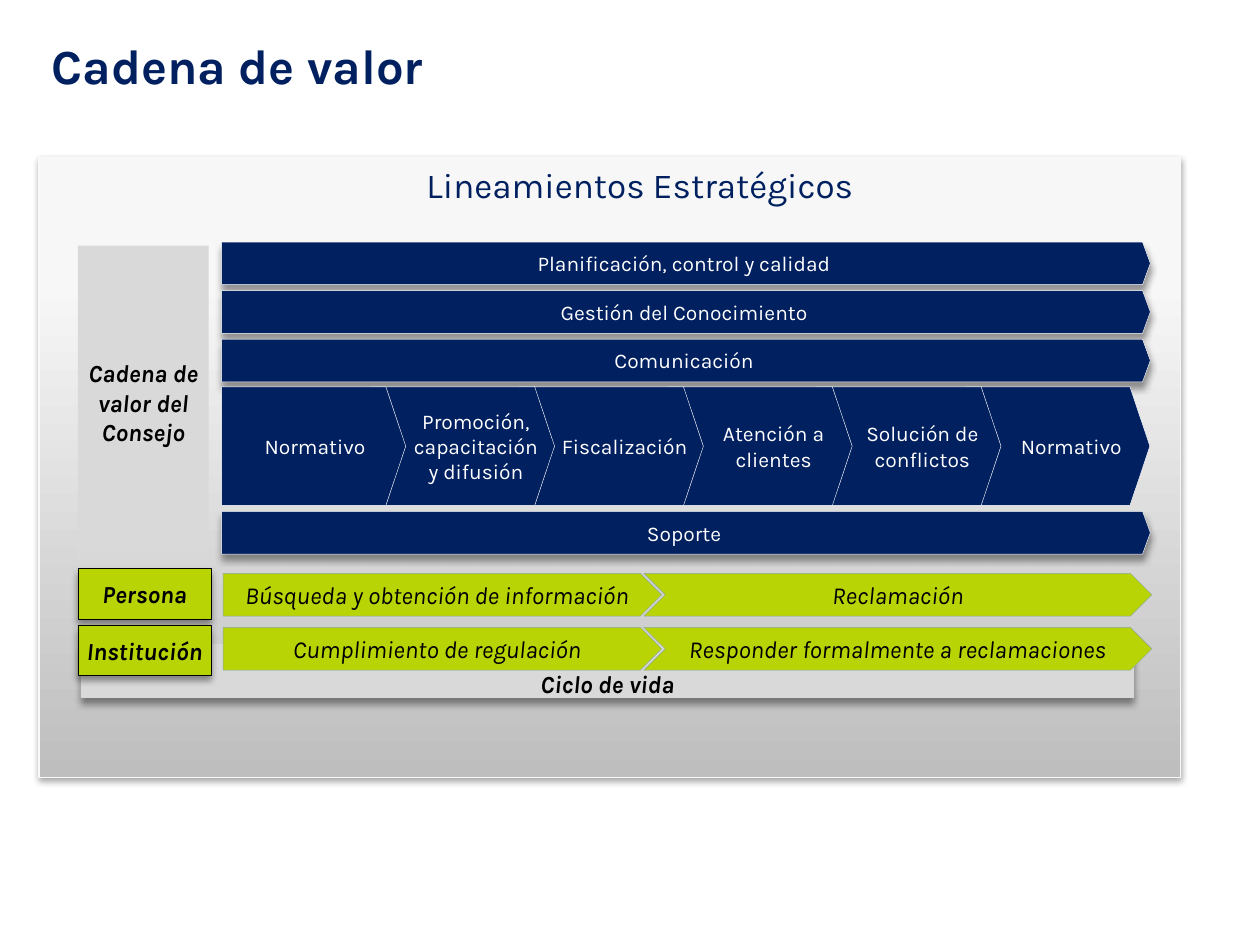
from lxml import etree
from pptx import Presentation
from pptx import util as u
from pptx.dml import color
from pptx.enum import shapes, text
from pptx.oxml import ns, parse_xml

FONT = "Karla"
NAVY, LIME, GREY = "002060", "B9D405", "D9D9D9"
WHITE, BLACK = "FFFFFF", "000000"
RECT = shapes.MSO_SHAPE.RECTANGLE
ARROW = shapes.MSO_SHAPE.PENTAGON
CHEVRON = shapes.MSO_SHAPE.CHEVRON


def rgb(value):
    return color.RGBColor.from_string(value)


def write(box, lines, size, tone, bold=False, italic=False,
          align=text.PP_ALIGN.CENTER, indent=0):
    frame = box.text_frame
    frame.word_wrap = True
    for index, line in enumerate(lines):
        para = frame.paragraphs[0] if index == 0 else frame.add_paragraph()
        para.alignment = align
        if indent:
            properties = para._p.get_or_add_pPr()
            properties.set("marL", str(u.Cm(indent)))
            properties.set("indent", "0")
        span = para.add_run()
        span.text = line
        span.font.name = FONT
        span.font.size = u.Pt(size)
        span.font.bold = bold
        span.font.italic = italic
        span.font.color.rgb = rgb(tone)


def add_shadow(box, alpha=40, blur=4, distance=3):
    effects = box._element.spPr.find(ns.qn("a:effectLst"))
    outer = etree.SubElement(
        effects, ns.qn("a:outerShdw"), blurRad=str(u.Pt(blur)),
        dist=str(u.Pt(distance)), dir="5400000", algn="t", rotWithShape="0")
    tone = etree.SubElement(outer, ns.qn("a:srgbClr"), val=BLACK)
    etree.SubElement(tone, ns.qn("a:alpha"), val=str(alpha * 1000))


def add_block(holder, kind, place, fill, line=None, width=0.25, adjust=None):
    box = holder.shapes.add_shape(kind, *map(u.Cm, place))
    box.shadow.inherit = False
    box.fill.solid()
    box.fill.fore_color.rgb = rgb(fill)
    if line:
        box.line.color.rgb = rgb(line)
        box.line.width = u.Pt(width)
    else:
        box.line.fill.background()
    if adjust is not None:
        box.adjustments[0] = adjust
    frame = box.text_frame
    frame.margin_left = frame.margin_right = 0
    frame.margin_top = frame.margin_bottom = 0
    frame.vertical_anchor = text.MSO_ANCHOR.MIDDLE
    return box


def add_panel(page):
    panel = add_block(page, RECT, (0.79, 3.18, 23.01, 12.5), GREY, "F9F9F9", 0.75)
    stops = "".join(
        f'<a:gs pos="{position * 1000}"><a:srgbClr val="{tone}"/></a:gs>'
        for position, tone in ((0, "BEBEBE"), (80, "F7F7F7"), (100, "F8F8F8")))
    gradient = parse_xml(
        f'<a:gradFill {ns.nsdecls("a")} rotWithShape="1"><a:gsLst>{stops}</a:gsLst>'
        '<a:lin ang="16200000" scaled="0"/></a:gradFill>')
    properties = panel._element.spPr
    properties.replace(properties.find(ns.qn("a:solidFill")), gradient)
    add_shadow(panel, 35, 3.1, 1.8)


def add_bar(page, label, top):
    bar = add_block(page, ARROW, (4.47, top, 18.72, 0.86), NAVY, WHITE, adjust=0.182)
    write(bar, [label], 12, WHITE)
    add_shadow(bar)


def add_steps(page, steps):
    group = page.shapes.add_group_shape()
    for index, lines in reversed(list(enumerate(steps))):
        step = add_block(group, ARROW, (4.47 + 3 * index, 7.8, 3.71, 2.39),
                         NAVY, WHITE, adjust=0.167)
        write(step, lines, 12, WHITE, indent=0.74 if index else 0.25)


def add_actor(page, label, top):
    actor = add_block(page, RECT, (1.57, top, 2.69, 1.02), LIME, BLACK)
    write(actor, [label], 14, BLACK, bold=True, italic=True)
    add_shadow(actor)


def add_phases(page, labels, top):
    group = page.shapes.add_group_shape()
    forms = ((ARROW, 4.5, 8.84), (CHEVRON, 12.98, 10.24))
    for label, (kind, left, width) in zip(labels, forms):
        phase = add_block(group, kind, (left, top, width, 0.86), LIME, "8AA6A8")
        write(phase, [label], 14, BLACK, italic=True)


def add_heading(page, label):
    box = page.shapes.add_textbox(*map(u.Cm, (6.35, 3.18, 13.11, 1.12)))
    box.text_frame.auto_size = text.MSO_AUTO_SIZE.SHAPE_TO_FIT_TEXT
    write(box, [label], 20, NAVY)


def set_title(page, label):
    title = page.shapes.title
    title.left, title.top, title.width, title.height = map(
        u.Cm, (0.79, 0.58, 12.29, 1.45))
    title.text_frame.vertical_anchor = text.MSO_ANCHOR.MIDDLE
    write(title, [label], 28, NAVY, bold=True, align=text.PP_ALIGN.LEFT)


def main():
    deck = Presentation()
    deck.slide_width, deck.slide_height = u.Cm(25.4), u.Cm(19.05)
    page = deck.slides.add_slide(deck.slide_layouts[5])
    set_title(page, "Cadena de valor")
    add_panel(page)

    side = add_block(page, RECT, (1.57, 4.95, 2.64, 6.32), GREY)
    write(side, ["Cadena de valor del Consejo"], 14, BLACK, bold=True, italic=True)
    cycle = add_block(page, RECT, (1.63, 12.98, 21.23, 1.09), GREY)
    cycle.text_frame.vertical_anchor = text.MSO_ANCHOR.BOTTOM
    write(cycle, ["Ciclo de vida"], 14, BLACK, bold=True, italic=True)
    add_shadow(cycle)

    bars = ("Planificación, control y calidad", "Gestión del Conocimiento",
            "Comunicación")
    for index, label in enumerate(bars):
        add_bar(page, label, 4.88 + 0.98 * index)
    add_steps(page, (["Normativo"], ["Promoción,", "capacitación y difusión"],
                     ["Fiscalización"], ["Atención a clientes"],
                     ["Solución de conflictos"], ["Normativo"]))
    add_bar(page, "Soporte", 10.31)

    add_actor(page, "Persona", 11.46)
    add_actor(page, "Institución", 12.6)
    add_phases(page, ("Búsqueda y obtención de información", "Reclamación"), 11.56)
    add_phases(page, ("Cumplimiento de regulación",
                      "Responder formalmente a reclamaciones"), 12.65)
    add_heading(page, "Lineamientos Estratégicos")
    deck.save("out.pptx")


if __name__ == "__main__":
    main()
